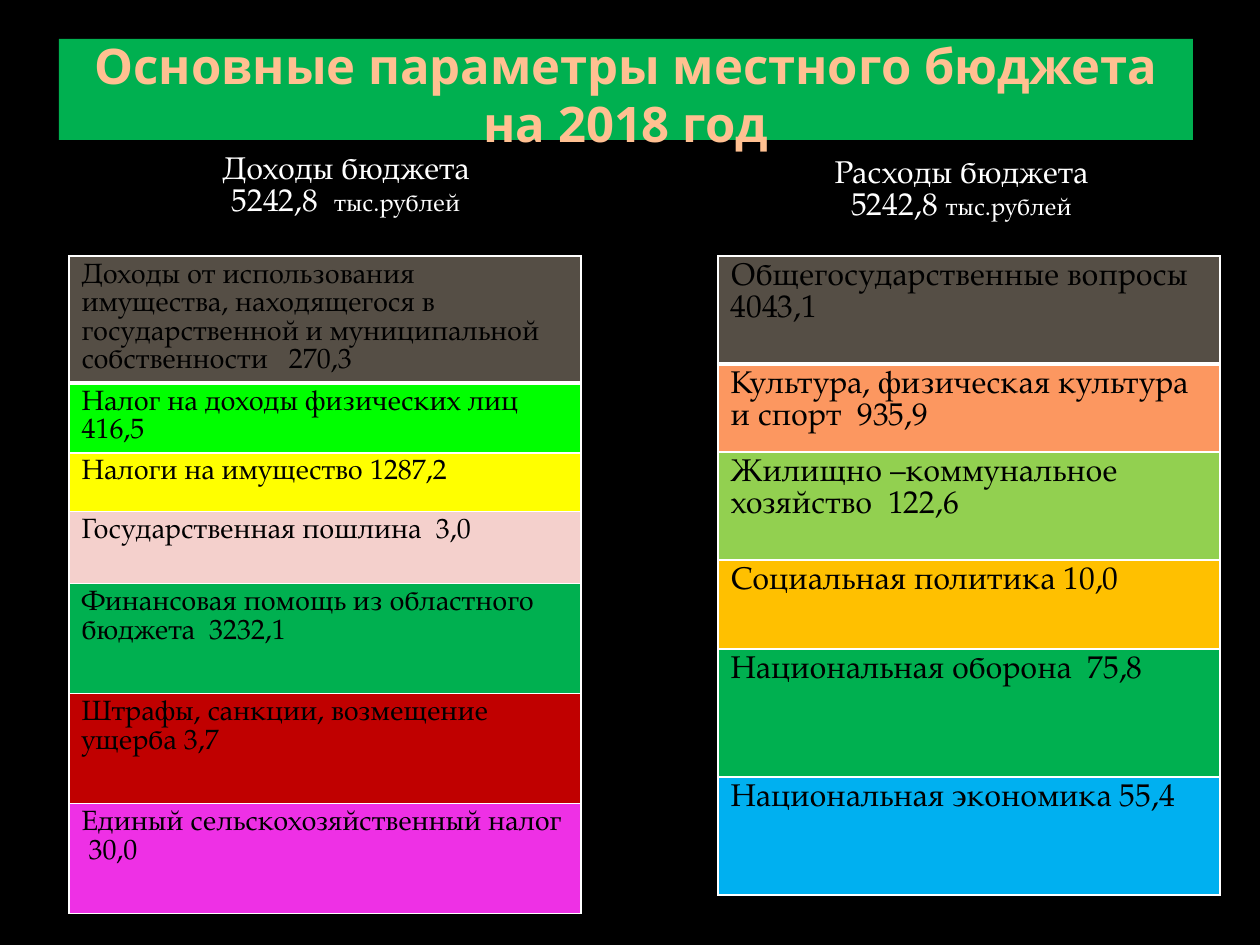
from dataclasses import dataclass

from lxml import etree
from pptx import Presentation
from pptx.dml.color import RGBColor
from pptx.enum.shapes import MSO_SHAPE
from pptx.enum.text import MSO_ANCHOR, PP_ALIGN
from pptx.oxml.ns import qn
from pptx.util import Emu, Pt

RECTANGLE = MSO_SHAPE.RECTANGLE
MIDDLE = MSO_ANCHOR.MIDDLE
CENTER = PP_ALIGN.CENTER
LEFT = PP_ALIGN.LEFT
PX_PER_INCH = 126
EMU_PER_INCH = 914400
BLANK_LAYOUT = 6
PLAIN_TABLE_STYLE = "{2D5ABB26-0587-4C30-8999-92F81FD0307C}"


@dataclass(frozen=True)
class Theme:
    background: str = "000000"
    title_fill: str = "00B050"
    title_text: str = "FFC091"
    light: str = "FFFFFF"
    dark: str = "000000"
    title_font: str = "Open Sans"
    body_font: str = "TeX Gyre Pagella"
    title_size: int = 28
    title_leading: int = 33
    heading_size: int = 18
    unit_size: int = 14
    leading: float = 1.02
    thin: int = 1
    thick: int = 3


@dataclass(frozen=True)
class Heading:
    left: int
    top: int
    width: int
    height: int
    margin_left: int
    margin_right: int
    name: str
    amount: str


@dataclass(frozen=True)
class Item:
    label: str
    height: int
    fill: str


@dataclass(frozen=True)
class BudgetTable:
    left: int
    top: int
    width: int
    size: int
    items: tuple[Item, ...]


THEME = Theme()

HEADINGS = (
    Heading(66, 150, 568, 97, 12, 20, "Доходы бюджета", "5242,8  "),
    Heading(648, 154, 563, 96, 76, 12, "Расходы бюджета", "5242,8 "),
)

TABLES = (
    BudgetTable(69, 256, 512, 16, (
        Item("Доходы от использования имущества, находящегося в государственной "
             "и муниципальной собственности   270,3", 125, "554E45"),
        Item("Налог на доходы физических лиц  416,5", 69, "00FF00"),
        Item("Налоги на имущество 1287,2", 59, "FFFF00"),
        Item("Государственная пошлина  3,0", 72, "F4D0CC"),
        Item("Финансовая помощь из областного  бюджета  3232,1", 110, "00B050"),
        Item("Штрафы, санкции, возмещение ущерба 3,7", 110, "C00000"),
        Item("Единый сельскохозяйственный налог  30,0", 110, "EE30E5"),
    )),
    BudgetTable(718, 256, 502, 18, (
        Item("Общегосударственные вопросы  4043,1", 108, "554E45"),
        Item("Культура, физическая культура и спорт  935,9", 88, "FC9760"),
        Item("Жилищно –коммунальное  хозяйство  122,6", 108, "92D050"),
        Item("Социальная политика 10,0", 89, "FFC000"),
        Item("Национальная оборона  75,8", 128, "00B050"),
        Item("Национальная экономика 55,4", 118, "00B0F0"),
    )),
)


def px(length: int) -> Emu:
    return Emu(round(length * EMU_PER_INCH / PX_PER_INCH))


def color(value: str) -> RGBColor:
    return RGBColor.from_string(value)


def style_paragraph(para, size: int, ink: str, align=LEFT) -> None:
    para.alignment = align
    para.line_spacing = Pt(size * THEME.leading)
    para.font.name = THEME.body_font
    para.font.size = Pt(size)
    para.font.color.rgb = color(ink)


def add_border(cell, side: str, width: int) -> None:
    properties = cell._tc.get_or_add_tcPr()
    line = etree.SubElement(properties, qn(f"a:ln{side}"), w=str(Pt(width)))
    fill = etree.SubElement(line, qn("a:solidFill"))
    etree.SubElement(fill, qn("a:srgbClr"), val=THEME.light)


def add_plain_table(page, left: int, top: int, width: int, heights: list[int]):
    frame = page.shapes.add_table(
        len(heights), 1, px(left), px(top), px(width), px(sum(heights)))
    table = frame.table
    table.first_row = False
    table.horz_banding = False
    table._tbl.tblPr.find(qn("a:tableStyleId")).text = PLAIN_TABLE_STYLE
    for row, height in zip(table.rows, heights):
        row.height = px(height)
    return table


def draw_title(page) -> None:
    box = page.shapes.add_shape(RECTANGLE, px(59), px(39), px(1134), px(101))
    box.shadow.inherit = False
    box.fill.solid()
    box.fill.fore_color.rgb = color(THEME.title_fill)
    box.line.fill.background()
    frame = box.text_frame
    frame.word_wrap = True
    frame.vertical_anchor = MIDDLE
    frame.margin_top = px(16)
    para = frame.paragraphs[0]
    para.text = "Основные параметры местного бюджета на 2018 год"
    style_paragraph(para, THEME.title_size, THEME.title_text, CENTER)
    para.line_spacing = Pt(THEME.title_leading)
    para.font.name = THEME.title_font
    para.font.bold = True


def draw_heading(page, heading: Heading) -> None:
    table = add_plain_table(
        page, heading.left, heading.top, heading.width, [heading.height])
    cell = table.cell(0, 0)
    cell.fill.background()
    cell.margin_left = px(heading.margin_left)
    cell.margin_right = px(heading.margin_right)
    name = cell.text_frame.paragraphs[0]
    name.text = heading.name
    amount = cell.text_frame.add_paragraph()
    amount.add_run().text = heading.amount
    unit = amount.add_run()
    unit.text = "тыс.рублей"
    unit.font.size = Pt(THEME.unit_size)
    for para in (name, amount):
        style_paragraph(para, THEME.heading_size, THEME.light, CENTER)


def draw_budget(page, budget: BudgetTable) -> None:
    table = add_plain_table(page, budget.left, budget.top, budget.width,
                            [item.height for item in budget.items])
    for index, item in enumerate(budget.items):
        cell = table.cell(index, 0)
        para = cell.text_frame.paragraphs[0]
        para.text = item.label
        style_paragraph(para, budget.size, THEME.dark)
        add_border(cell, "L", THEME.thin)
        add_border(cell, "R", THEME.thin)
        add_border(cell, "T", THEME.thick if index == 1 else THEME.thin)
        add_border(cell, "B", THEME.thick if index == 0 else THEME.thin)
        cell.fill.solid()
        cell.fill.fore_color.rgb = color(item.fill)


def main() -> None:
    deck = Presentation()
    deck.slide_width = px(1260)
    deck.slide_height = px(945)
    page = deck.slides.add_slide(deck.slide_layouts[BLANK_LAYOUT])
    page.background.fill.solid()
    page.background.fill.fore_color.rgb = color(THEME.background)
    draw_title(page)
    for heading in HEADINGS:
        draw_heading(page, heading)
    for budget in TABLES:
        draw_budget(page, budget)
    deck.save("out.pptx")


if __name__ == "__main__":
    main()
